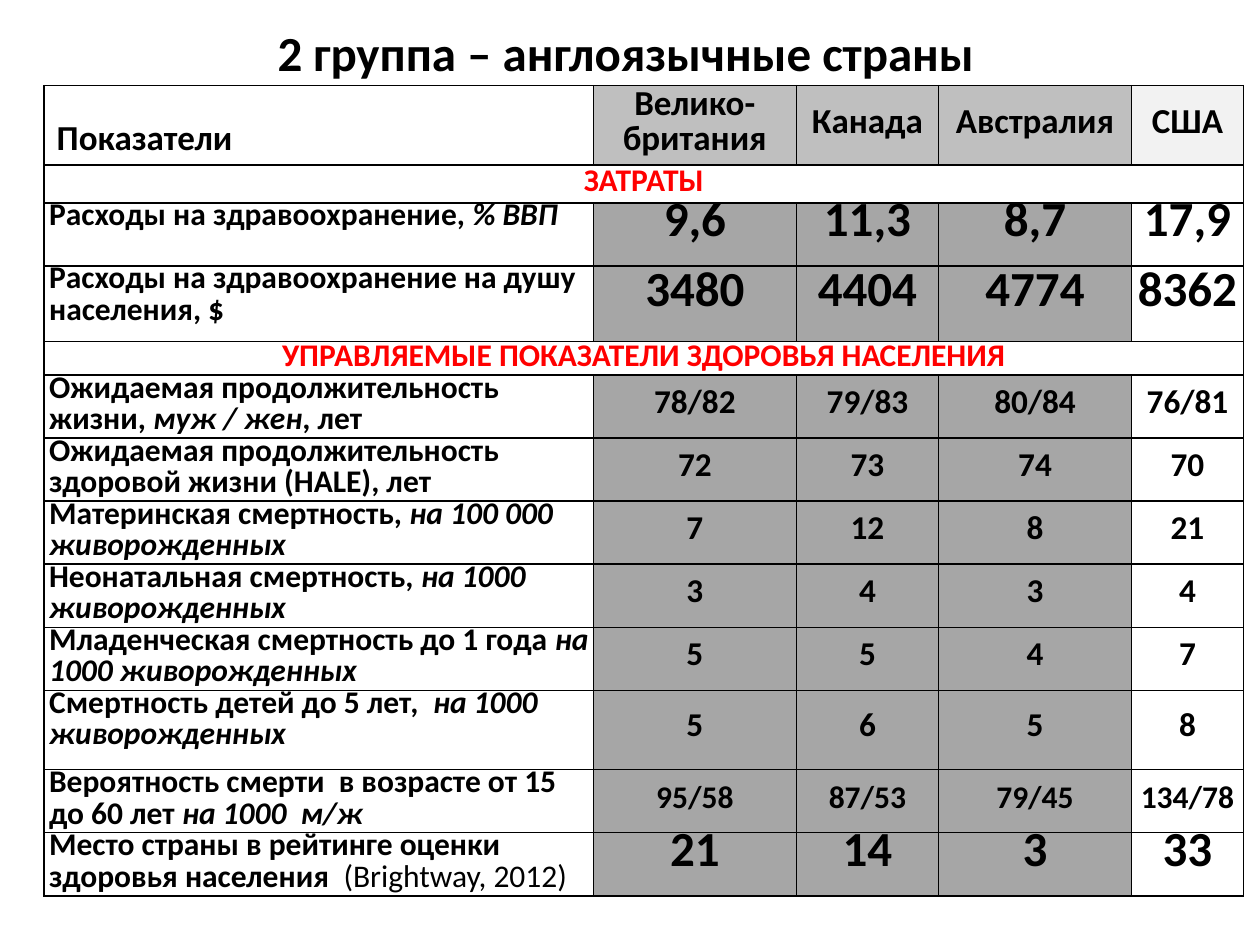
from dataclasses import dataclass

from lxml import etree
from pptx import Presentation
from pptx import util as u
from pptx.dml.color import RGBColor
from pptx.enum import text as t
from pptx.oxml import ns


@dataclass(frozen=True)
class Theme:
    font: str = "Calibri"
    ink: str = "000000"
    red: str = "FF0000"
    white: str = "FFFFFF"
    pale: str = "F2F2F2"
    light: str = "BFBFBF"
    gray: str = "A6A6A6"
    big: int = 28
    head: int = 20
    mid: int = 19
    body: int = 18


LEFT, MID = t.PP_ALIGN.LEFT, t.PP_ALIGN.CENTER
TOP, CENTER, LOW = t.MSO_ANCHOR.TOP, t.MSO_ANCHOR.MIDDLE, t.MSO_ANCHOR.BOTTOM


class Page:
    """One slide on a grid of 1000 columns by 750 rows."""

    def __init__(self, deck, theme):
        self.theme = theme
        self.unit = deck.slide_width // 1000
        self.slide = deck.slides.add_slide(deck.slide_layouts[6])

    def grid(self, *counts):
        return [u.Emu(n * self.unit) for n in counts]

    def label(self, frame, parts, size, align=LEFT, color=None, line=None):
        """Fill a frame with runs, each a text followed by its marks (b, i)."""
        frame.word_wrap = True
        frame.text = parts[0][0]
        for words, _ in parts[1:]:
            frame.paragraphs[-1].add_run().text = words
        for para in frame.paragraphs:
            para.alignment = align
            if line:
                para.line_spacing = u.Pt(line)
            for run, (_, marks) in zip(para.runs, parts):
                font = run.font
                font.name, font.size = self.theme.font, u.Pt(size)
                font.bold, font.italic = "b" in marks, "i" in marks
                font.color.rgb = RGBColor.from_string(color or self.theme.ink)

    def title(self, words, *box):
        frame = self.slide.shapes.add_textbox(*self.grid(*box)).text_frame
        self.label(frame, [(words, "b")], self.theme.big, MID)

    def table(self, left, top, cols, rows):
        sizes = self.grid(left, top, sum(cols), sum(rows))
        table = self.slide.shapes.add_table(len(rows), len(cols), *sizes).table
        table.first_row = table.horz_banding = False
        for col, width in zip(table.columns, self.grid(*cols)):
            col.width = width
        for row, height in zip(table.rows, self.grid(*rows)):
            row.height = height
        for cell in table.iter_cells():
            self.frame(cell)
        return table

    def frame(self, cell):
        """Give a cell thin margins, black borders and no fill."""
        cell.margin_left = cell.margin_right = u.Inches(0.04)
        cell.margin_top = cell.margin_bottom = 0
        props = cell._tc.get_or_add_tcPr()
        for side in ("lnL", "lnR", "lnT", "lnB"):
            edge = etree.SubElement(props, ns.qn(f"a:{side}"), w=str(u.Pt(1)))
            fill = etree.SubElement(edge, ns.qn("a:solidFill"))
            etree.SubElement(fill, ns.qn("a:srgbClr"), val=self.theme.ink)
        cell.fill.background()

    def cell(self, cell, parts, size, align=MID, anchor=CENTER, fill=None,
             color=None, line=18):
        cell.vertical_anchor = anchor
        if fill:
            cell.fill.solid()
            cell.fill.fore_color.rgb = RGBColor.from_string(fill)
        self.label(cell.text_frame, parts, size, align, color, line)

    def band(self, table, row, words, line):
        """Put a red heading across a whole row."""
        first = table.cell(row, 0)
        first.merge(table.cell(row, len(table.columns) - 1))
        self.cell(first, [(words, "b")], self.theme.body, anchor=TOP,
                  color=self.theme.red, line=line)


COLS = [436, 161, 113, 153, 89]
ROWS = [63, 30, 50, 60, 26, 50, 50, 50, 50, 50, 63, 50, 50]
HEADS = ["Велико-\nбритания", "Канада", "Австралия", "США"]
BANDS = {1: ("ЗАТРАТЫ", 20),
         4: ("УПРАВЛЯЕМЫЕ ПОКАЗАТЕЛИ ЗДОРОВЬЯ НАСЕЛЕНИЯ", 19.2)}
BIRTHS = ("на 1000 живорожденных", "bi")

# Row, type size of the values, label runs, values by country
FACTS = [
    (2, "big", [("Расходы на здравоохранение, ", "b"), ("% ВВП", "bi")],
     ["9,6", "11,3", "8,7", "17,9"]),
    (3, "big", [("Расходы на здравоохранение на душу населения, $", "b")],
     ["3480", "4404", "4774", "8362"]),
    (5, "mid", [("Ожидаемая продолжительность жизни, ", "b"),
                ("муж / жен", "bi"), (", лет", "b")],
     ["78/82", "79/83", "80/84", "76/81"]),
    (6, "mid", [("Ожидаемая продолжительность здоровой жизни (HALE), лет", "b")],
     ["72", "73", "74", "70"]),
    (7, "mid", [("Материнская смертность, ", "b"),
                ("на 100 000 живорожденных", "bi")],
     ["7", "12", "8", "21"]),
    (8, "mid", [("Неонатальная смертность, ", "b"), BIRTHS],
     ["3", "4", "3", "4"]),
    (9, "mid", [("Младенческая смертность до 1 года ", "b"), BIRTHS],
     ["5", "5", "4", "7"]),
    (10, "mid", [("Смертность детей до 5 лет,  ", "b"), BIRTHS],
     ["5", "6", "5", "8"]),
    (11, "body", [("Вероятность смерти  в возрасте от 15 до 60 лет ", "b"),
                  ("на 1000  м/ж", "bi")],
     ["95/58", "87/53", "79/45", "134/78"]),
    (12, "big", [("Место страны в рейтинге оценки здоровья населения  ", "b"),
                 ("(Brightway, 2012)", "")],
     ["21", "14", "3", "33"]),
]


def main():
    deck = Presentation()
    deck.slide_width, deck.slide_height = u.Inches(10), u.Inches(7.5)
    theme = Theme()
    page = Page(deck, theme)
    table = page.table(35, 68, COLS, ROWS)

    corner = table.cell(0, 0)
    page.cell(corner, [("Показатели", "b")], theme.head, LEFT, LOW, line=20)
    corner.margin_left, corner.margin_bottom = u.Inches(0.1), u.Inches(0.04)
    fills = [theme.light] * 3 + [theme.pale]
    for col, (name, fill) in enumerate(zip(HEADS, fills), 1):
        page.cell(table.cell(0, col), [(name, "b")], theme.head, fill=fill,
                  line=20)

    for row, (words, line) in BANDS.items():
        page.band(table, row, words, line)

    fills = [theme.gray] * 3 + [theme.white]
    for row, size, label, values in FACTS:
        page.cell(table.cell(row, 0), label, theme.body, LEFT, TOP)
        for col, (value, fill) in enumerate(zip(values, fills), 1):
            page.cell(table.cell(row, col), [(value, "b")],
                      getattr(theme, size), fill=fill)

    page.title("2 группа – англоязычные страны", 75, 13, 843, 57)
    deck.save("out.pptx")


if __name__ == "__main__":
    main()
